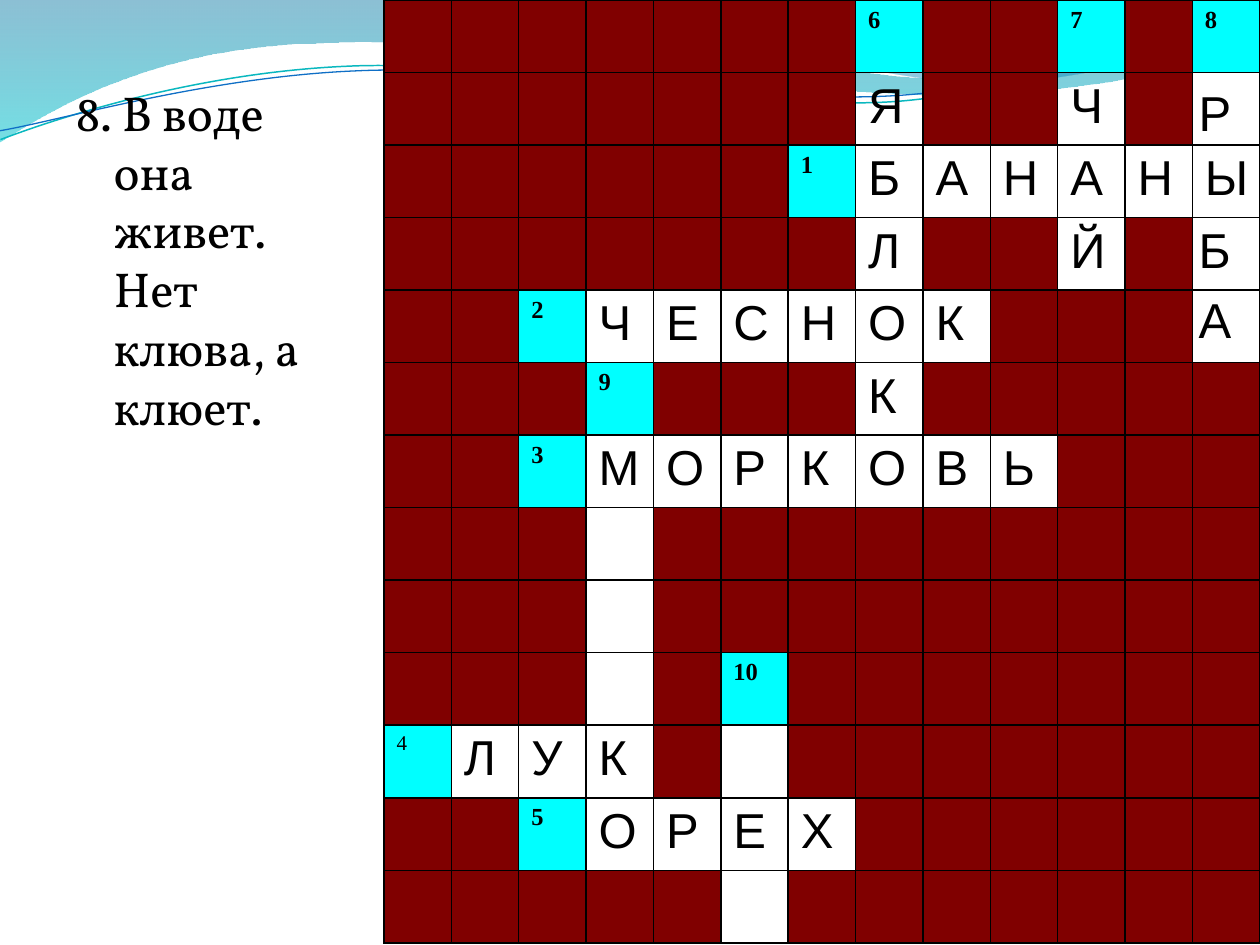
from lxml import etree
from pptx import Presentation
from pptx import util as u
from pptx.dml.color import RGBColor
from pptx.enum import text
from pptx.oxml.ns import qn

PX = 914400 / 126
COLORS = {
    "black": "000000", "white": "FFFFFF", "block": "800000", "clue": "00FFFF",
    "wave_top": "0074A1", "wave_bottom": "00C6CF",
    "crest_top": "00A1A9", "crest_bottom": "008BBF",
    "teal_line": "0AB8BF", "blue_line": "0F6FC6",
}
# "#" is a blocked cell, "." an open one; clue numbers replace cells by position
GRID = [
    "#############",
    "#######Я##Ч#.",
    "#######БАНАНЫ",
    "#######Л##Й#.",
    "###ЧЕСНОК###.",
    "#######К#####",
    "###МОРКОВЬ###",
    "###.#########",
    "###.#########",
    "###.#########",
    "#ЛУК#.#######",
    "###ОРЕХ######",
    "#####.#######",
]
CLUES = {(0, 7): "6", (0, 10): "7", (0, 12): "8", (2, 6): "1", (4, 2): "2", (5, 3): "9",
         (6, 2): "3", (9, 5): "10", (10, 0): "4", (11, 2): "5"}
FIRST_WHITE_ROW = 10  # open cells above this row stay transparent


def px(value):
    return round(value * PX)


def color(name):
    return RGBColor.from_string(COLORS[name])


def format_run(r, font, size, bold=False):
    r.font.name, r.font.size, r.font.bold = font, u.Pt(size), bold
    r.font.color.rgb = color("black")


def add_curve(slide, box, start, segments, close):
    """Outline of straight (x, y) and cubic (x1, y1, x2, y2, x, y) segments."""
    left, top = box
    points = [start] + [seg[i:i + 2] for seg in segments for i in range(0, len(seg), 2)]
    placed = [(px(left + x), px(top + y)) for x, y in points]
    builder = slide.shapes.build_freeform(*placed[0], scale=1.0)
    builder.add_line_segments(placed[1:], close=close)
    sp = builder.convert_to_shape()
    sp.shadow.inherit = False
    # Merge the three points of each cubic segment into one Bézier command
    lines = iter(list(sp._element.iter(qn("a:lnTo"))))
    for seg in segments:
        first = next(lines)
        if len(seg) == 6:
            bezier = etree.Element(qn("a:cubicBezTo"))
            first.addprevious(bezier)
            for line in (first, next(lines), next(lines)):
                bezier.append(line[0])
                line.getparent().remove(line)
    return sp


def add_wave(slide, box, start, segments, stops):
    sp = add_curve(slide, box, start, segments, True)
    sp.line.fill.background()
    sp.fill.gradient()
    sp.fill.gradient_angle = 270
    for stop, (position, name, _) in zip(sp.fill.gradient_stops, stops):
        stop.position = position
        stop.color.rgb = color(name)
    for clr, (_, _, alpha) in zip(sp._element.spPr.iter(qn("a:srgbClr")), stops):
        etree.SubElement(clr, qn("a:alpha"), val=str(alpha * 1000))


def add_wave_line(slide, box, start, segments, name, width):
    sp = add_curve(slide, box, start, segments, False)
    sp.rotation = 357.3
    sp.fill.background()
    sp.line.color.rgb = color(name)
    sp.line.width = u.Pt(width)


def add_header_waves(slide, box):
    add_wave(slide, box, (0, 0), [
        (554, -1), (600, 21, 837, 79, 955, 79), (1075, 79, 1207, 33, 1260, 11),
        (1261, 45), (1239, 55, 1096, 96, 940, 95), (784, 95, 481, 35, 324, 43),
        (163, 45, 58, 105, -1, 142), (0, 0)],
        [(0, "wave_top", 45), (1, "wave_bottom", 55)])
    add_wave(slide, box, (604, -1), [
        (641, 14, 859, 78, 969, 82), (1079, 87, 1211, 40, 1260, 26), (1260, 0), (604, -1)],
        [(0, "crest_top", 30), (0.8, "crest_bottom", 45)])
    add_wave_line(slide, box, (-2, 110), [
        (59, 90, 199, 52, 350, 53), (499, 53, 745, 118, 896, 114),
        (1049, 109, 1184, 45, 1260, 27)], "teal_line", 0.85)
    add_wave_line(slide, box, (-2, 101), [
        (57, 94, 207, 57, 357, 58), (509, 58, 750, 112, 902, 108),
        (1052, 104, 1188, 52, 1262, 38)], "blue_line", 0.75)


def add_borders(cell):
    tcPr = cell._tc.get_or_add_tcPr()
    for side in ("lnL", "lnR", "lnT", "lnB"):
        ln = etree.SubElement(tcPr, qn("a:" + side), w=str(u.Pt(1)))
        fill = etree.SubElement(ln, qn("a:solidFill"))
        etree.SubElement(fill, qn("a:srgbClr"), val=COLORS["black"])


def fill_cell(cell, row, col):
    mark, clue = GRID[row][col], CLUES.get((row, col))
    add_borders(cell)
    if clue or mark == "#" or (row >= FIRST_WHITE_ROW and (row, col) != (10, 5)):
        cell.fill.solid()
        cell.fill.fore_color.rgb = color("clue" if clue else "block" if mark == "#" else "white")
    else:
        cell.fill.background()
    if clue or mark not in "#.":
        cell.text_frame.text = clue or mark
        r = cell.text_frame.paragraphs[0].runs[0]
        if clue:
            plain = clue == "4"
            format_run(r, "Times New Roman", 12 if plain else 14, not plain)
        else:
            format_run(r, "Arial", 28)


def add_crossword(slide, box):
    left, top, width, height = map(px, box)
    rows, cols = len(GRID), len(GRID[0])
    table = slide.shapes.add_table(rows, cols, left, top, width, height).table
    table.first_row = table.horz_banding = False
    for column in table.columns:
        column.width = width // cols
    for row in range(rows):
        table.rows[row].height = height // rows
        for col in range(cols):
            fill_cell(table.cell(row, col), row, col)


def place_body(slide, sp, box, lines, font):
    """lines holds (text, space before in points) pairs."""
    sp.left, sp.top, sp.width, sp.height = map(px, box)
    slide.shapes._spTree.append(sp._element)  # bring to front
    tf = sp.text_frame
    tf.word_wrap, tf.auto_size = True, text.MSO_AUTO_SIZE.NONE
    tf.vertical_anchor = text.MSO_ANCHOR.TOP
    tf.text = "\n".join(line for line, _ in lines)
    for p, (_, space) in zip(tf.paragraphs, lines):
        p.space_before = u.Pt(space)
        pPr = p._p.get_or_add_pPr()
        pPr.set("marL", str(px(38)))
        pPr.set("indent", str(px(-38)))
        etree.SubElement(pPr, qn("a:buNone"))
        format_run(p.runs[0], font, 28)


def main():
    prs = Presentation()
    prs.slide_width, prs.slide_height = px(1260), px(945)
    slide = prs.slides.add_slide(prs.slide_layouts[3])
    title, riddle, answer = slide.placeholders
    title._element.getparent().remove(title._element)

    add_header_waves(slide, (0, 0))
    add_crossword(slide, (384, 0, 876, 943))
    place_body(slide, riddle, (63, 76, 299, 769),
               [("8. В воде она живет. Нет клюва, а клюет.", 0)], "Vollkorn")
    # The gap before Б leaves room for the Ы of the crossing word
    place_body(slide, answer, (1186, 76, 74, 287), [("Р", 0), ("Б", 45), ("А", 6)], "Arial")
    prs.save("out.pptx")


if __name__ == "__main__":
    main()
